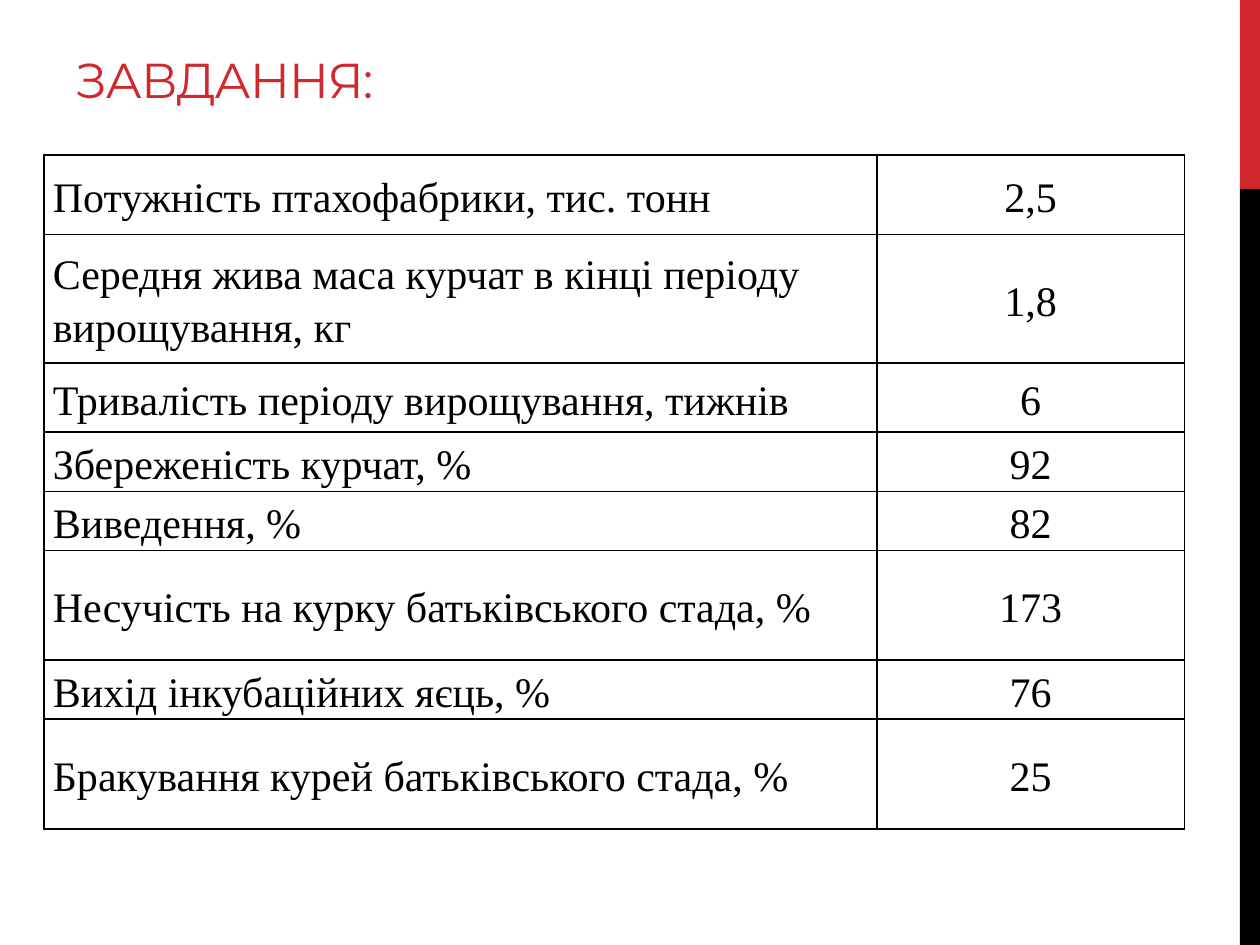
from lxml.etree import SubElement
from pptx import Presentation
from pptx.dml.color import RGBColor
from pptx.enum.shapes import MSO_SHAPE
from pptx.enum.text import MSO_ANCHOR, MSO_AUTO_SIZE, PP_ALIGN
from pptx.oxml.ns import qn
from pptx.util import Inches, Pt

RED = RGBColor(0xD1, 0x28, 0x2E)
BLACK = RGBColor(0, 0, 0)

ROWS = [
    ("Потужність птахофабрики, тис. тонн", "2,5", 0.63),
    ("Середня жива маса курчат в кінці періоду вирощування, кг", "1,8", 1.02),
    ("Тривалість періоду вирощування, тижнів", "6", 0.55),
    ("Збереженість курчат, %", "92", 0.47),
    ("Виведення, %", "82", 0.47),
    ("Несучість на курку батьківського стада, %", "173", 0.87),
    ("Вихід інкубаційних яєць, %", "76", 0.47),
    ("Бракування курей батьківського стада, %", "25", 0.87),
]
WIDTHS = (6.61, 2.44)
ALIGNS = (PP_ALIGN.LEFT, PP_ALIGN.CENTER)


def add_borders(cell):
    props = cell._tc.get_or_add_tcPr()
    for i, side in enumerate(("lnL", "lnR", "lnT", "lnB")):
        line = SubElement(props, qn(f"a:{side}"), w=str(Pt(1)))
        fill = SubElement(line, qn("a:solidFill"))
        SubElement(fill, qn("a:srgbClr"), val=str(BLACK))
        props.insert(i, line)  # borders must come before the cell fill


prs = Presentation()
prs.slide_width, prs.slide_height = Inches(10), Inches(7.5)
slide = prs.slides.add_slide(prs.slide_layouts[5])

# Side stripe
for top, height, color in ((0, 1.5, RED), (1.5, 6, BLACK)):
    bar = slide.shapes.add_shape(
        MSO_SHAPE.RECTANGLE, Inches(9.84), Inches(top), Inches(0.16), Inches(height))
    bar.shadow.inherit = False
    bar.fill.solid()
    bar.fill.fore_color.rgb = color
    bar.line.fill.background()

# Title
title = slide.shapes.title
title.left, title.top = Inches(0.5), Inches(0.3)
title.width, title.height = Inches(8.59), Inches(0.61)
frame = title.text_frame
frame.text = "ЗАВДАННЯ:"
frame.auto_size = MSO_AUTO_SIZE.NONE
frame.vertical_anchor = MSO_ANCHOR.BOTTOM
para = frame.paragraphs[0]
para.alignment = PP_ALIGN.LEFT
para.font.name, para.font.size = "Montserrat", Pt(28)
para.font.color.rgb = RED
para.runs[0].font._element.set("spc", "-60")

# Task table
table = slide.shapes.add_table(
    len(ROWS), len(WIDTHS), Inches(0.35), Inches(1.23),
    Inches(sum(WIDTHS)), Inches(sum(row[-1] for row in ROWS))).table
table.first_row = table.horz_banding = False
for col, width in zip(table.columns, WIDTHS):
    col.width = Inches(width)

for r, (label, value, height) in enumerate(ROWS):
    table.rows[r].height = Inches(height)
    for c, text in enumerate((label, value)):
        cell = table.cell(r, c)
        cell.text = text
        cell.fill.background()
        cell.vertical_anchor = MSO_ANCHOR.MIDDLE
        cell.margin_left = cell.margin_right = Inches(0.07)
        cell.margin_top = cell.margin_bottom = 0
        para = cell.text_frame.paragraphs[0]
        para.alignment = ALIGNS[c]
        para.line_spacing = 1.15
        para.font.name, para.font.size = "Times New Roman", Pt(24)
        para.font.color.rgb = BLACK
        add_borders(cell)

prs.save("out.pptx")
